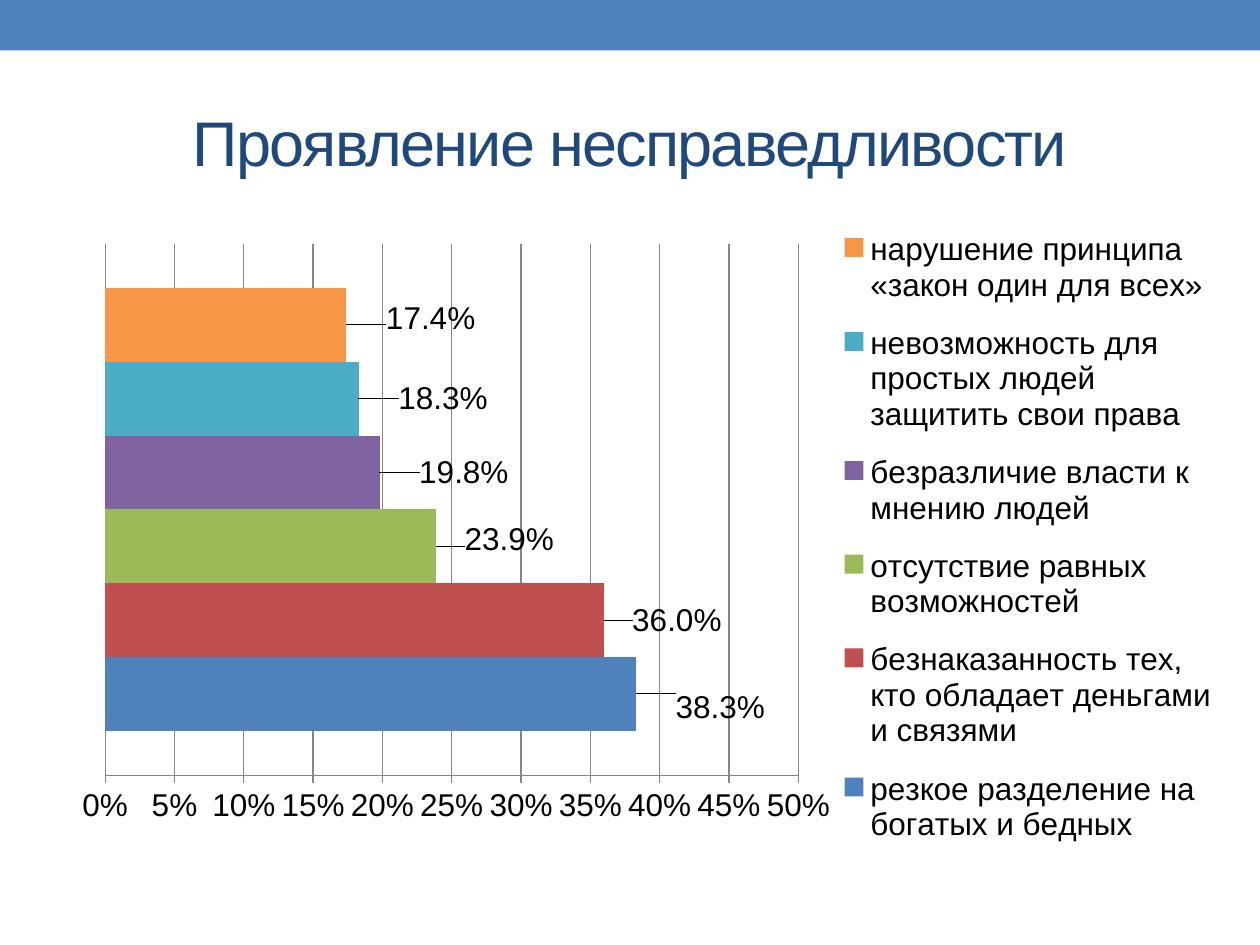
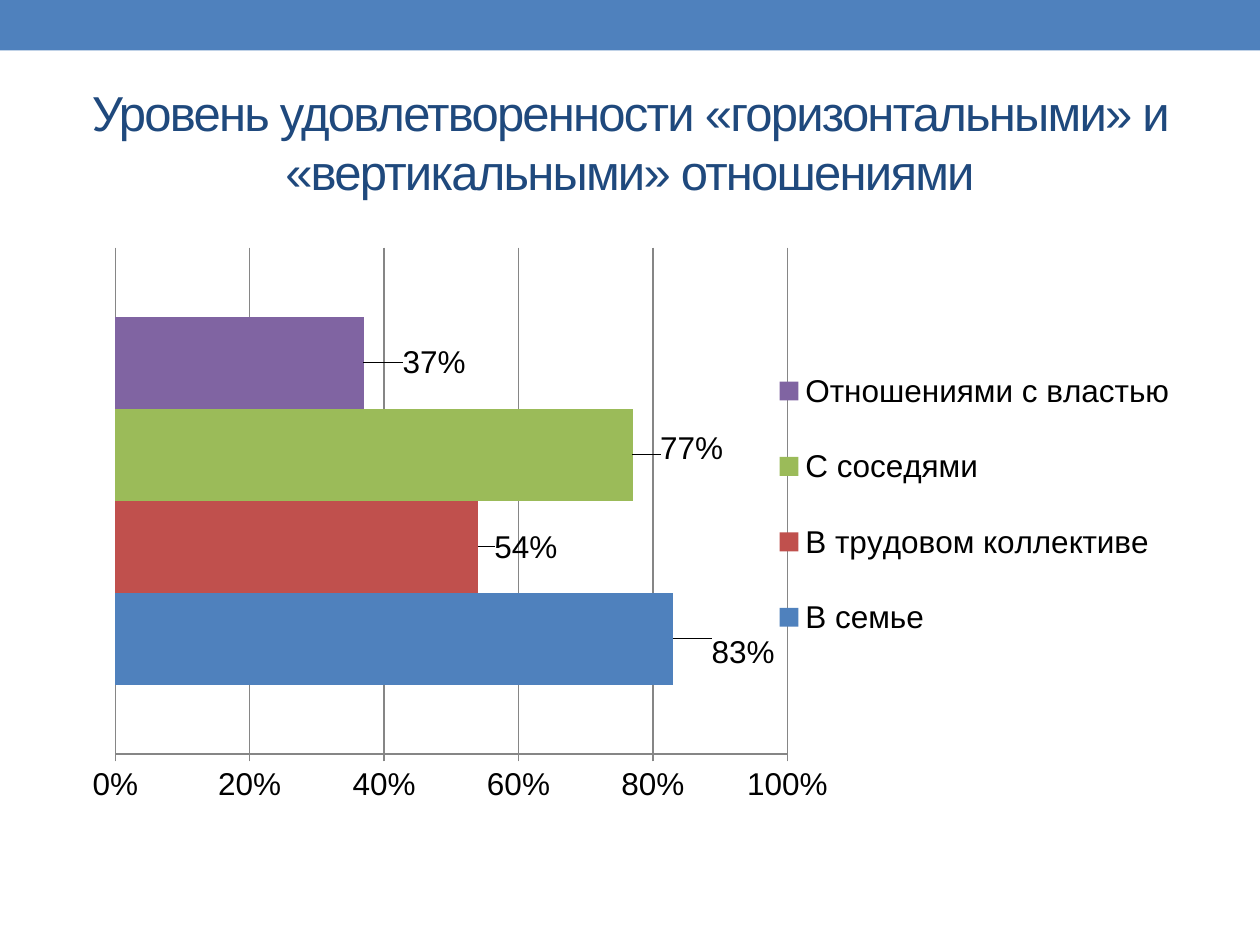
from dataclasses import dataclass

from lxml.etree import SubElement
from pptx import Presentation
from pptx.chart.data import CategoryChartData
from pptx.dml.color import RGBColor
from pptx.enum.chart import XL_CHART_TYPE, XL_LABEL_POSITION, XL_LEGEND_POSITION, XL_TICK_MARK
from pptx.enum.shapes import MSO_SHAPE
from pptx.enum.text import MSO_ANCHOR, PP_ALIGN
from pptx.oxml import parse_xml
from pptx.oxml.ns import nsdecls, qn
from pptx.util import Pt

PAGES = [
    {
        "title": "Проявление несправедливости",
        "title_size": 36,
        "frame": (40.3, 111.6, 660.2, 394.6),
        "plot": (0.03, 0.07, 0.6, 0.77),
        "legend": (0.67, 0.02, 0.33, 0.95),
        "gap": 120,
        "axis": {"minimum_scale": 0, "maximum_scale": 0.5, "major_unit": 0.05},
        "label_format": "0.0%",
        "bars": [
            ("резкое разделение на богатых и бедных", 0.383, (0.03, 0.02)),
            ("безнаказанность тех, кто обладает деньгами и связями", 0.36, (0.02, 0)),
            ("отсутствие равных возможностей", 0.239, (0.02, -0.01)),
            ("безразличие власти к мнению людей", 0.198, (0.03, 0)),
            ("невозможность для простых людей защитить свои права", 0.183, (0.03, 0)),
            ("нарушение принципа «закон один для всех»", 0.174, (0.03, -0.01)),
        ],
    },
    {
        "title": "Уровень удовлетворенности «горизонтальными» и «вертикальными» отношениями",
        "title_size": 28,
        "frame": (40.3, 130.3, 640.1, 375.8),
        "plot": (0.04, 0.03, 0.6, 0.77),
        "legend": (0.64, 0.16, 0.35, 0.52),
        "gap": 150,
        "axis": {"minimum_scale": 0, "maximum_scale": 1, "major_unit": 0.2},
        "label_format": "0%",
        "bars": [
            ("В семье", 0.83, (0.03, 0.02)),
            ("В трудовом коллективе", 0.54, (0.01, 0)),
            ("С соседями", 0.77, (0.02, -0.01)),
            ("Отношениями с властью", 0.37, (0.03, 0)),
        ],
    },
]


@dataclass(frozen=True)
class Theme:
    font: str = "Arial"
    chart_size: int = 18
    letter_spacing: str = "-100"
    band: RGBColor = RGBColor(0x4F, 0x81, 0xBD)
    title: RGBColor = RGBColor(0x1F, 0x49, 0x7D)
    text: RGBColor = RGBColor(0, 0, 0)
    grid: RGBColor = RGBColor(0x86, 0x86, 0x86)
    bars: tuple = ("4F81BD", "C0504D", "9BBB59", "8064A2", "4BACC6", "F79646")


THEME = Theme()
PAGE_SIZE = (720, 540)
BAND_BOX = (0, 0, 720, 28.8)
TITLE_BOX = (36, 41.8, 648, 77.8)


def points(values):
    return [Pt(value) for value in values]


def apply(target, values):
    for name, value in values.items():
        setattr(target, name, value)


def style_font(font, size, color):
    apply(font, {"name": THEME.font, "size": Pt(size), "bold": False})
    font.color.rgb = color


def style_line(line):
    line.color.rgb = THEME.grid
    line.width = Pt(0.75)


def add_band(page):
    band = page.shapes.add_shape(MSO_SHAPE.RECTANGLE, *points(BAND_BOX))
    band.shadow.inherit = False
    band.fill.solid()
    band.fill.fore_color.rgb = THEME.band
    band.line.fill.background()


def add_title(page, text, size):
    frame = page.shapes.add_textbox(*points(TITLE_BOX)).text_frame
    apply(frame, {"word_wrap": True, "vertical_anchor": MSO_ANCHOR.MIDDLE})
    para = frame.paragraphs[0]
    para.alignment = PP_ALIGN.CENTER
    span = para.add_run()
    span.text = text
    style_font(span.font, size, THEME.title)
    span._r.get_or_add_rPr().set("spc", THEME.letter_spacing)


def manual_layout(values):
    layout = parse_xml(f"<c:layout {nsdecls('c')}/>")
    manual = SubElement(layout, qn("c:manualLayout"))
    for name, value in values.items():
        SubElement(manual, qn(f"c:{name}")).set("val", str(value))
    return layout


def place(element, box, **target):
    for old in element.findall(qn("c:layout")):
        element.remove(old)
    edges = {"xMode": "edge", "yMode": "edge"}
    return manual_layout({**target, **edges, **dict(zip("xywh", box))})


def shift_label(labels, offset):
    label = parse_xml(f"<c:dLbl {nsdecls('c')}/>")
    SubElement(label, qn("c:idx")).set("val", "0")
    label.append(manual_layout(dict(zip("xy", offset))))
    SubElement(label, qn("c:dLblPos")).set("val", "outEnd")
    for part in ("LegendKey", "Val", "CatName", "SerName", "Percent", "BubbleSize"):
        SubElement(label, qn(f"c:show{part}")).set("val", str(int(part == "Val")))
    labels._element.insert(0, label)


def style_axes(chart, scale):
    chart.category_axis.visible = False
    axis = chart.value_axis
    apply(axis, {
        **scale,
        "has_major_gridlines": True,
        "major_tick_mark": XL_TICK_MARK.OUTSIDE,
        "minor_tick_mark": XL_TICK_MARK.NONE,
    })
    apply(axis.tick_labels, {"number_format": "0%", "number_format_is_linked": False})
    style_line(axis.format.line)
    style_line(axis.major_gridlines.format.line)


def add_bar_chart(page, content):
    data = CategoryChartData()
    data.categories = ["1"]
    for name, value, offset in content["bars"]:
        data.add_series(name, [value])
    chart = page.shapes.add_chart(
        XL_CHART_TYPE.BAR_CLUSTERED, *points(content["frame"]), data
    ).chart
    apply(chart, {"has_title": False, "has_legend": True})
    style_font(chart.font, THEME.chart_size, THEME.text)
    style_axes(chart, content["axis"])

    plot = chart.plots[0]
    apply(plot, {"gap_width": content["gap"], "overlap": 0, "vary_by_categories": False})
    for series, color, bar in zip(plot.series, THEME.bars, content["bars"]):
        series.format.fill.solid()
        series.format.fill.fore_color.rgb = RGBColor.from_string(color)
        labels = series.data_labels
        apply(labels, {
            "show_value": True,
            "number_format": content["label_format"],
            "number_format_is_linked": False,
            "position": XL_LABEL_POSITION.OUTSIDE_END,
        })
        style_font(labels.font, THEME.chart_size, THEME.text)
        shift_label(labels, bar[2])

    legend = chart.legend
    apply(legend, {"position": XL_LEGEND_POSITION.RIGHT, "include_in_layout": False})
    style_font(legend.font, THEME.chart_size, THEME.text)
    key = legend._element
    layout = place(key, content["legend"])
    key.find(qn("c:legendPos")).addnext(layout)
    area = chart._chartSpace.chart.plotArea
    area.insert(0, place(area, content["plot"], layoutTarget="inner"))


def main():
    deck = Presentation()
    deck.slide_width, deck.slide_height = points(PAGE_SIZE)
    for content in PAGES:
        page = deck.slides.add_slide(deck.slide_layouts[6])
        add_band(page)
        add_title(page, content["title"], content["title_size"])
        add_bar_chart(page, content)
    deck.save("out.pptx")


if __name__ == "__main__":
    main()
